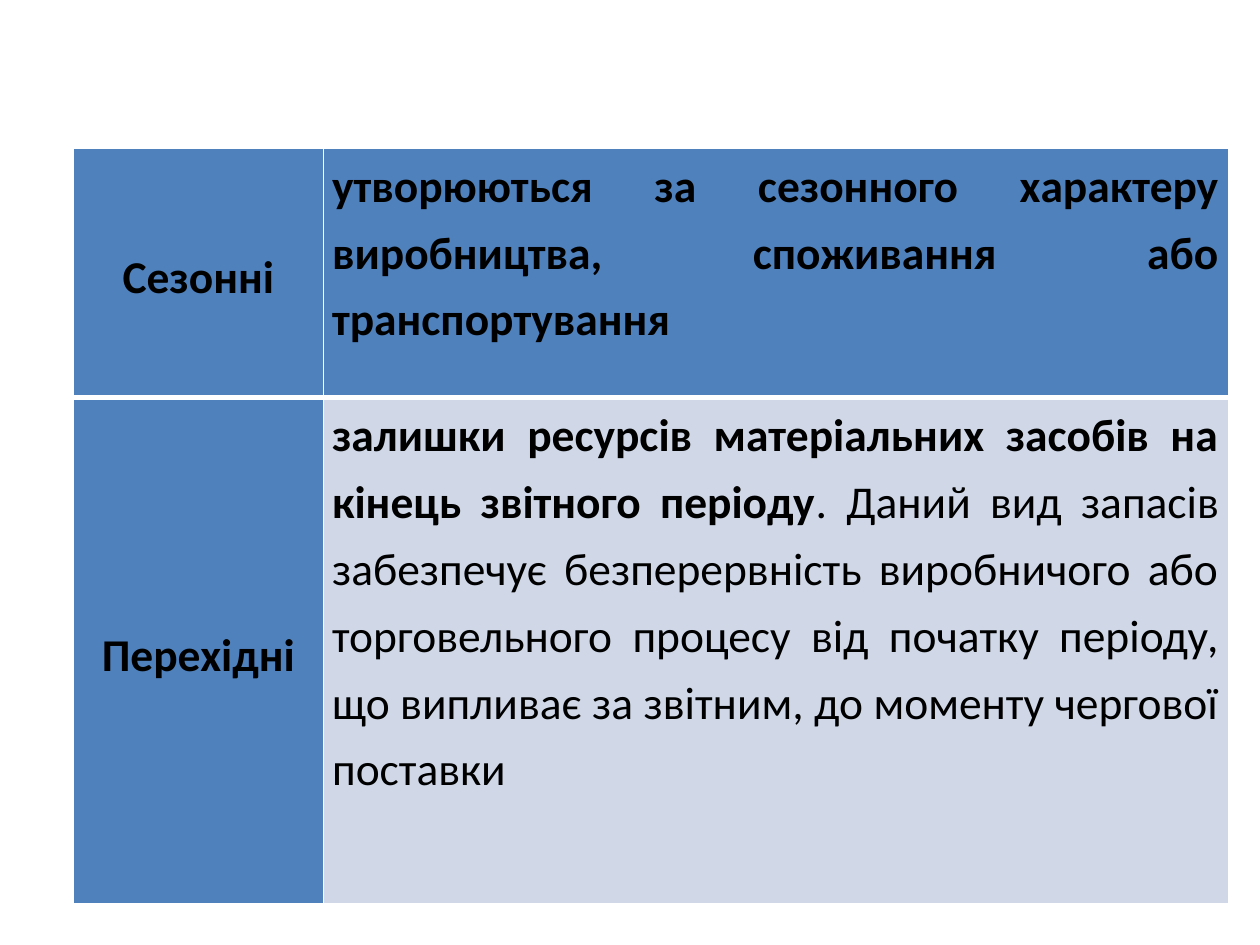
from dataclasses import dataclass

import lxml.etree
import pptx
import pptx.dml.color
import pptx.enum.text
import pptx.oxml.ns
import pptx.util
from pptx.dml.color import RGBColor
from pptx.enum.text import MSO_ANCHOR, PP_ALIGN
from pptx.util import Pt

BLACK = RGBColor(0x00, 0x00, 0x00)
WHITE = RGBColor(0xFF, 0xFF, 0xFF)
BLUE = RGBColor(0x4F, 0x81, 0xBD)
PALE_BLUE = RGBColor(0xD0, 0xD8, 0xE8)

LEFT, TOP = 42, 84.5
COLUMN_WIDTHS = (142.8, 517.2)
THIN, THICK = 1, 3


@dataclass
class StockKind:
    name: str
    definition: str
    detail: str
    height: float
    definition_fill: RGBColor
    border_top: float
    border_bottom: float


STOCK_KINDS = [
    StockKind(
        "Сезонні",
        "утворюються за сезонного характеру виробництва, споживання або транспортування ",
        "", 142.6, BLUE, THIN, THICK,
    ),
    StockKind(
        "Перехідні",
        "залишки ресурсів матеріальних засобів на кінець звітного періоду",
        ". Даний вид запасів забезпечує безперервність виробничого або торговельного "
        "процесу від початку періоду, що випливає за звітним, до моменту чергової поставки",
        289.4, PALE_BLUE, THICK, THIN,
    ),
]


def set_borders(cell, top: float, bottom: float) -> None:
    """Give the cell white edges; must run before the fill is set."""
    properties = cell._tc.get_or_add_tcPr()
    qualified = pptx.oxml.ns.qn
    for side, width in (("L", THIN), ("R", THIN), ("T", top), ("B", bottom)):
        line = lxml.etree.SubElement(properties, qualified(f"a:ln{side}"), w=str(Pt(width)))
        fill = lxml.etree.SubElement(line, qualified("a:solidFill"))
        lxml.etree.SubElement(fill, qualified("a:srgbClr"), val=str(WHITE))


def fill_cell(cell, kind: StockKind, spans: list[tuple[str, bool]], color: RGBColor,
              align: PP_ALIGN, anchor: MSO_ANCHOR) -> None:
    """Style one cell and write its (text, bold) spans."""
    set_borders(cell, kind.border_top, kind.border_bottom)
    cell.fill.solid()
    cell.fill.fore_color.rgb = color
    cell.vertical_anchor = anchor
    cell.margin_left = cell.margin_right = Pt(5)
    cell.margin_top = cell.margin_bottom = Pt(0)
    para = cell.text_frame.paragraphs[0]
    para.alignment = align
    para.line_spacing = 1.2
    para.font.name = "Calibri"
    para.font.size = Pt(26)
    para.font.color.rgb = BLACK
    for text, bold in spans:
        span = para.add_run()
        span.text = text
        span.font.name = "Calibri"
        span.font.size = Pt(26)
        span.font.color.rgb = BLACK
        span.font.bold = bold


def main() -> None:
    deck = pptx.Presentation()
    deck.slide_width, deck.slide_height = Pt(720), Pt(540)
    page = deck.slides.add_slide(deck.slide_layouts[6])
    table = page.shapes.add_table(
        len(STOCK_KINDS), len(COLUMN_WIDTHS), Pt(LEFT), Pt(TOP),
        Pt(sum(COLUMN_WIDTHS)), Pt(sum(kind.height for kind in STOCK_KINDS)),
    ).table
    for column, width in zip(table.columns, COLUMN_WIDTHS):
        column.width = Pt(width)
    for index, kind in enumerate(STOCK_KINDS):
        table.rows[index].height = Pt(kind.height)
        fill_cell(table.cell(index, 0), kind, [(kind.name, True)], BLUE,
                  PP_ALIGN.CENTER, MSO_ANCHOR.MIDDLE)
        spans = [(kind.definition, True)]
        if kind.detail:
            spans.append((kind.detail, False))
        fill_cell(table.cell(index, 1), kind, spans, kind.definition_fill,
                  PP_ALIGN.JUSTIFY, MSO_ANCHOR.TOP)
    deck.save("out.pptx")


if __name__ == "__main__":
    main()
